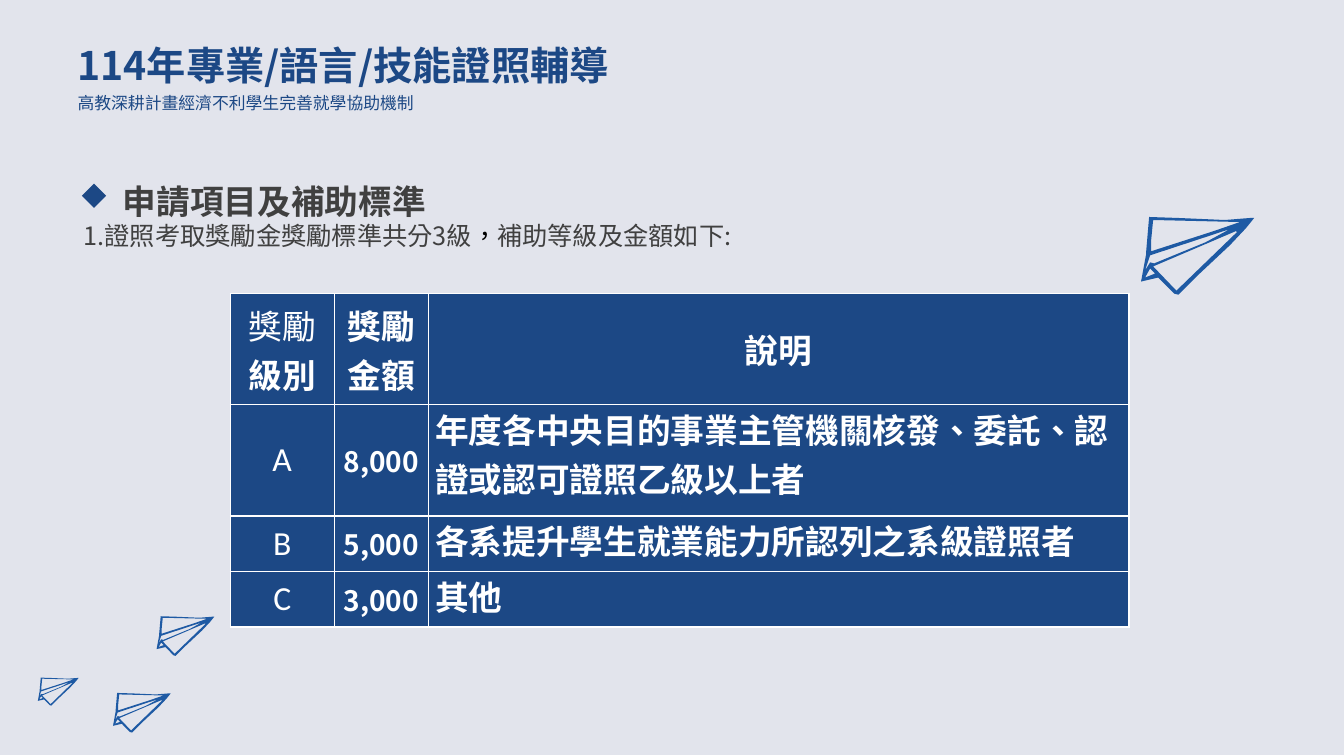
import pptx
import pptx.dml.color
import pptx.enum.shapes
import pptx.enum.text
import pptx.oxml
import pptx.oxml.ns
import pptx.util

SLIDE_WIDTH, SLIDE_HEIGHT = pptx.util.Inches(13.31), pptx.util.Inches(7.48)
SANS, LATIN = "Noto Sans CJK SC", "Calibri"
NAVY, PLANE_BLUE, GREY, WHITE, BLACK = "1C4885", "1E5AA4", "404040", "FFFFFF", "000000"
BACKGROUND = "E2E4EC"

# Places are left, top, width, height in percent of the slide.
# A run is its text and whatever differs from the format of its paragraph.
TEXTS = [
    ((5.03, 4.81, 53.27, 7.62), [("114年專業/語言/技能證照輔導", {})],
     dict(size=28, color=NAVY, bold=True)),
    ((5.03, 10.29, 43.43, 4.95), [("高教深耕計畫經濟不利學生完善就學協助機制", {})],
     dict(size=12, color=NAVY, spacing=1.5)),
    ((5.48, 28.48, 55.75, 5.35),
     [("1.證照考取獎勵金獎勵標準共分3級", {}), ("，", dict(font=LATIN, color=BLACK)),
      ("補助等級及金額如下:", {})],
     dict(size=18, color=GREY)),
    ((8.41, 20.59, 40.05, 9.49), [("申請項目及補助標準", {})],
     dict(size=24, color=GREY, bold=True, spacing=1.5)),
]
DIAMOND = (6.09, 24.33, 1.8, 3.21)

TABLE_CORNER = (17.13, 38.9)
COLUMN_WIDTHS = (7.74, 6.99, 52.14)
ROW_UNIT, ROW_UNITS = 7.36, (2, 2, 1, 1)
HEADER = [[("獎勵", dict(bold=False)), ("級別", {})], [("獎勵金額", {})], [("說明", {})]]
COMMA = ("、", dict(font=LATIN))
GRADES = [
    ("A", "8,000", [("年度各中央目的事業主管機關核發", {}), COMMA, ("委託", {}), COMMA,
                    ("認證或認可證照乙級以上者", {})]),
    ("B", "5,000", [("各系提升學生就業能力所認列之系級證照者", {})]),
    ("C", "3,000", [("其他", {})]),
]

# Paper plane in hundredths of an inch: the outline, then the openings in it.
PLANE = [
    [(112, 2), (104, 12), (88, 29), (56, 59), (37, 78), (33, 77), (17, 61), (0, 65),
     (5, 38), (5, 36), (8, 1), (37, 2), (83, 4), (108, 2)],
    [(12, 4), (10, 24), (10, 35), (72, 15), (98, 6)],
    [(12, 50), (35, 74), (95, 16), (94, 15)],
    [(9, 39), (4, 54), (9, 46), (13, 47), (64, 26), (88, 13)],
    [(4, 61), (14, 57), (9, 52)],
]
PLANE_PLACES = [(84.9, 28.61, 1), (11.65, 81.55, 0.51), (2.82, 89.71, 0.36), (8.41, 91.71, 0.51)]


def rgb(color):
    return pptx.dml.color.RGBColor.from_string(color)


def across(share):
    return round(SLIDE_WIDTH * share / 100)


def down(share):
    return round(SLIDE_HEIGHT * share / 100)


def place(left, top, width, height):
    return across(left), down(top), across(width), down(height)


def paint(shape, color):
    shape.shadow.inherit = False
    shape.fill.solid()
    shape.fill.fore_color.rgb = rgb(color)
    shape.line.fill.background()


def write(frame, runs, align="LEFT", spacing=None, **base):
    """Fill a text frame with one paragraph of formatted runs."""
    frame.word_wrap = True
    para = frame.paragraphs[0]
    para.alignment = getattr(pptx.enum.text.PP_ALIGN, align)
    if spacing:
        para.line_spacing = spacing
    for text, changes in runs:
        style = {"font": SANS, "bold": False, **base, **changes}
        span = para.add_run()
        span.text = text
        span.font.size = pptx.util.Pt(style["size"])
        span.font.bold = style["bold"]
        span.font.color.rgb = rgb(style["color"])
        span.font.name = style["font"]
        properties = span._r.get_or_add_rPr()
        properties.set("lang", "zh-TW")
        east_asian = pptx.oxml.parse_xml(
            f'<a:ea {pptx.oxml.ns.nsdecls("a")} typeface="{style["font"]}"/>')
        properties.find(pptx.oxml.ns.qn("a:latin")).addnext(east_asian)


def add_borders(cell):
    """Draw white one-point lines on all sides; they come before the fill."""
    properties = cell._tc.get_or_add_tcPr()
    for index, side in enumerate(("lnL", "lnR", "lnT", "lnB")):
        properties.insert(index, pptx.oxml.parse_xml(
            f'<a:{side} {pptx.oxml.ns.nsdecls("a")} w="12700"><a:solidFill>'
            f'<a:srgbClr val="{WHITE}"/></a:solidFill></a:{side}>'))


def fill_cell(cell, runs, anchor="MIDDLE", **style):
    cell.fill.solid()
    cell.fill.fore_color.rgb = rgb(NAVY)
    add_borders(cell)
    cell.margin_left = cell.margin_right = pptx.util.Inches(0.07)
    cell.margin_top = cell.margin_bottom = 0
    cell.vertical_anchor = getattr(pptx.enum.text.MSO_ANCHOR, anchor)
    write(cell.text_frame, runs, **{"size": 24, "color": WHITE, "bold": True, **style})


def add_grade_table(page):
    size = (sum(COLUMN_WIDTHS), ROW_UNIT * sum(ROW_UNITS))
    table = page.shapes.add_table(
        len(ROW_UNITS), len(COLUMN_WIDTHS), *place(*TABLE_CORNER, *size)).table
    for column, width in zip(table.columns, COLUMN_WIDTHS):
        column.width = across(width)
    for row, units in zip(table.rows, ROW_UNITS):
        row.height = down(ROW_UNIT * units)
    for column, runs in enumerate(HEADER):
        fill_cell(table.cell(0, column), runs, align="CENTER")
    for row, (grade, amount, description) in enumerate(GRADES, start=1):
        fill_cell(table.cell(row, 0), [(grade, {})], align="CENTER", font=LATIN, bold=False)
        fill_cell(table.cell(row, 1), [(amount, {})], align="CENTER", size=20)
        fill_cell(table.cell(row, 2), description, anchor="TOP")


def add_plane(page, left, top, scale):
    (start, *outline), *openings = PLANE
    builder = page.shapes.build_freeform(*start, scale=pptx.util.Inches(0.01) * scale)
    builder.add_line_segments(outline, close=True)
    for first, *rest in openings:
        builder.move_to(*first)
        builder.add_line_segments(rest, close=True)
    paint(builder.convert_to_shape(across(left), down(top)), PLANE_BLUE)


def main():
    deck = pptx.Presentation()
    deck.slide_width, deck.slide_height = SLIDE_WIDTH, SLIDE_HEIGHT
    page = deck.slides.add_slide(deck.slide_layouts[6])
    page.background.fill.solid()
    page.background.fill.fore_color.rgb = rgb(BACKGROUND)
    for position, runs, style in TEXTS:
        box = page.shapes.add_textbox(*place(*position))
        write(box.text_frame, runs, **style)
        box.text_frame.auto_size = pptx.enum.text.MSO_AUTO_SIZE.SHAPE_TO_FIT_TEXT
    diamond = page.shapes.add_shape(
        pptx.enum.shapes.MSO_SHAPE.DIAMOND, *place(*DIAMOND))
    paint(diamond, NAVY)
    add_grade_table(page)
    for plane_place in PLANE_PLACES:
        add_plane(page, *plane_place)
    deck.save("out.pptx")


if __name__ == "__main__":
    main()
